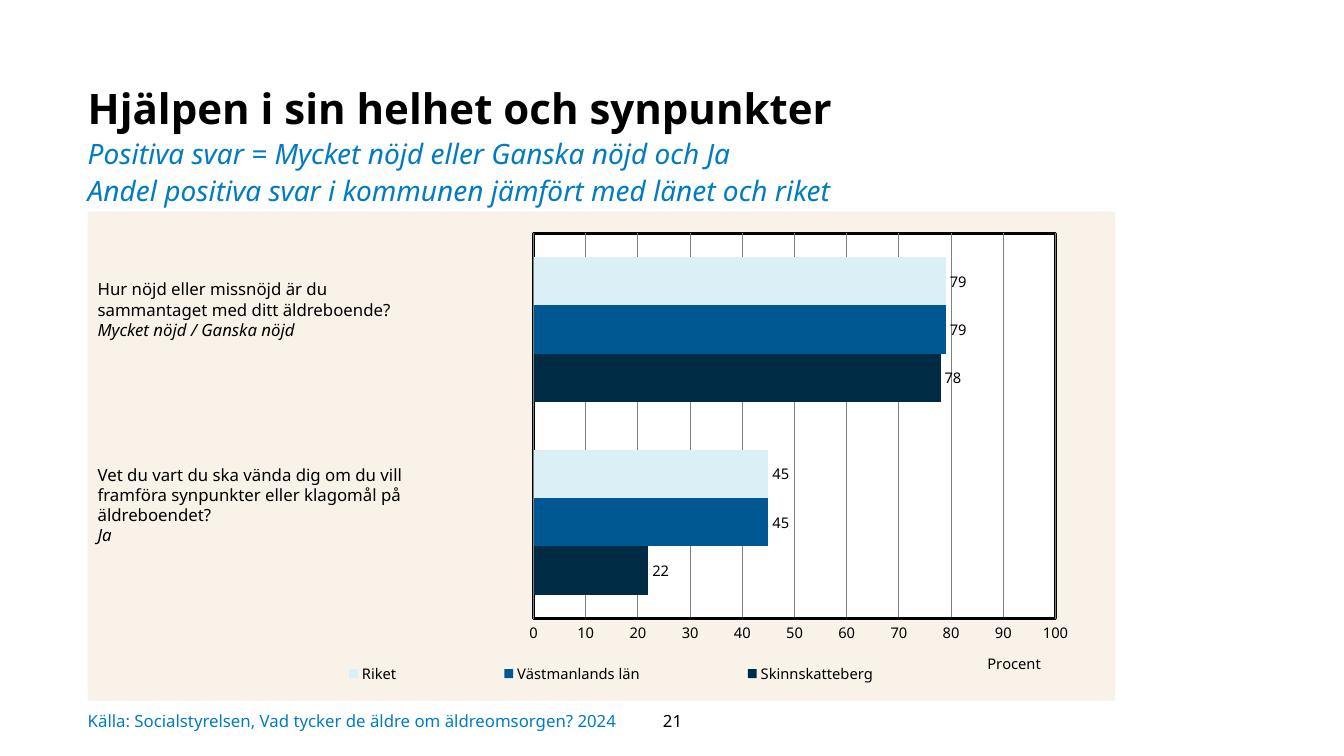
from lxml.etree import SubElement
from pptx import Presentation
from pptx.chart.data import CategoryChartData
from pptx.dml.color import RGBColor
from pptx.enum.chart import XL_CHART_TYPE as ChartType, XL_LABEL_POSITION as LabelPosition
from pptx.enum.chart import XL_LEGEND_POSITION as LegendPosition, XL_TICK_MARK as TickMark
from pptx.enum.text import MSO_ANCHOR as Anchor, MSO_AUTO_SIZE as AutoSize, PP_ALIGN as Align
from pptx.oxml import parse_xml
from pptx.oxml.ns import nsdecls, qn
from pptx.util import Inches, Pt

BLACK, WHITE, BLUE = "000000", "FFFFFF", "017CC1"
SAND, GRID = "F8F2E8", "808080"
LEFT = 0.87


def color(value):
    return RGBColor.from_string(value)


class SlideBuilder:
    """Holds the style and the current slide, and adds its elements."""

    font = "Noto Sans"

    def __init__(self, deck):
        self.page = deck.slides.add_slide(deck.slide_layouts[5])

    def style(self, font, size, shade=BLACK, bold=False, italic=False):
        font.name, font.size = self.font, Pt(size)
        font.bold, font.italic = bold, italic
        font.color.rgb = color(shade)

    def place(self, shape, area):
        shape.left, shape.top, shape.width, shape.height = map(Inches, area)

    def insets(self, frame, values):
        (frame.margin_left, frame.margin_top,
         frame.margin_right, frame.margin_bottom) = map(Inches, values)

    def title(self, area, heading, subtitles):
        box = self.page.shapes.title
        self.place(box, area)
        frame = box.text_frame
        frame.word_wrap = True
        frame.auto_size = AutoSize.TEXT_TO_FIT_SHAPE
        frame.vertical_anchor = Anchor.BOTTOM
        self.insets(frame, (0, 0, 0.1, 0.05))
        para = frame.paragraphs[0]
        para.alignment, para.line_spacing = Align.LEFT, 1.1
        span = para.add_run()
        span.text = heading
        self.style(span.font, 30, bold=True)
        for line in subtitles:
            para.add_line_break()
            span = para.add_run()
            span.text = line
            self.style(span.font, 20, BLUE, italic=True)

    def text(self, area, lines, shade=BLACK, align=Align.LEFT,
             anchor=Anchor.TOP, margins=(0.1, 0.05, 0.1, 0.05)):
        frame = self.page.shapes.add_textbox(*map(Inches, area)).text_frame
        frame.word_wrap, frame.vertical_anchor = True, anchor
        self.insets(frame, margins)
        for index, (line, italic) in enumerate(lines):
            para = frame.add_paragraph() if index else frame.paragraphs[0]
            para.alignment = align
            span = para.add_run()
            span.text = line
            self.style(span.font, 12, shade, italic=italic)

    def layout(self, element, after, **sizes):
        for old in element.findall(qn("c:layout")):
            element.remove(old)
        layout = parse_xml(f"<c:layout {nsdecls('c')}/>")
        manual = SubElement(layout, qn("c:manualLayout"))
        if "inner" in sizes:
            SubElement(manual, qn("c:layoutTarget"), val=sizes.pop("inner"))
        for key in ("x", "y"):
            SubElement(manual, qn(f"c:{key}Mode"), val="edge")
        for key, value in sizes.items():
            SubElement(manual, qn(f"c:{key}"), val=str(value))
        if after is None:
            element.insert(0, layout)
        else:
            element.find(qn(after)).addnext(layout)

    def fill_area(self, element, before, fill, line):
        outline = (f'<a:ln w="{Pt(2)}"><a:solidFill><a:srgbClr val="{line}"/></a:solidFill></a:ln>'
                   if line else "<a:ln><a:noFill/></a:ln>")
        area = parse_xml(f'<c:spPr {nsdecls("c", "a")}><a:solidFill><a:srgbClr val="{fill}"/>'
                         f"</a:solidFill>{outline}</c:spPr>")
        if before is None:
            element.append(area)
        else:
            element.find(qn(before)).addprevious(area)

    def bar_chart(self, area, categories, rows, axis_title):
        data = CategoryChartData()
        data.categories = categories
        for name, values, _ in rows:
            data.add_series(name, values)
        chart = self.page.shapes.add_chart(
            ChartType.BAR_CLUSTERED, *map(Inches, area), data).chart
        self.style(chart.font, 10.5)
        chart.has_title = False
        self.bars(chart.plots[0], rows)
        self.axes(chart, axis_title)
        chart.has_legend = True
        legend = chart.legend
        legend.position, legend.include_in_layout = LegendPosition.BOTTOM, False
        self.style(legend.font, 10.5)
        space = chart.element
        plot_area = space.chart.plotArea
        self.layout(legend._element, "c:legendPos", x=0.154, y=0.91, w=0.711, h=0.07)
        self.layout(plot_area, None, inner="inner", x=0.434, y=0.044, w=0.508, h=0.789)
        self.fill_area(plot_area, None, WHITE, BLACK)
        self.fill_area(space, "c:txPr", SAND, None)

    def bars(self, plot, rows):
        plot.gap_width, plot.overlap = 100, 0
        plot.vary_by_categories = False
        for series, (_, _, shade) in zip(plot.series, rows):
            series.format.fill.solid()
            series.format.fill.fore_color.rgb = color(shade)
            labels = series.data_labels
            labels.show_value = True
            labels.position = LabelPosition.OUTSIDE_END
            self.style(labels.font, 10.5)

    def axes(self, chart, axis_title):
        chart.category_axis.visible = False
        axis = chart.value_axis
        axis.minimum_scale, axis.maximum_scale, axis.major_unit = 0, 100, 10
        axis.major_tick_mark = axis.minor_tick_mark = TickMark.NONE
        axis.format.line.color.rgb = color(BLACK)
        axis.format.line.width = Pt(2)
        axis.has_major_gridlines = True
        axis.major_gridlines.format.line.color.rgb = color(GRID)
        axis.major_gridlines.format.line.width = Pt(0.75)
        self.style(axis.tick_labels.font, 10.5)
        span = axis.axis_title.text_frame.paragraphs[0].add_run()
        span.text = axis_title
        self.style(span.font, 10.5)
        self.layout(axis.axis_title._element, "c:tx", x=0.873, y=0.895)


def main():
    deck = Presentation()
    deck.slide_width, deck.slide_height = Inches(13.33), Inches(7.5)
    slide = SlideBuilder(deck)
    slide.title((LEFT, 0.76, 7.79, 1.34), "Hjälpen i sin helhet och synpunkter",
                ["Positiva svar = Mycket nöjd eller Ganska nöjd och Ja",
                 "Andel positiva svar i kommunen jämfört med länet och riket"])
    slide.bar_chart((LEFT, 2.1, 10.19, 4.85), ["1", "2"],
                    [("Skinnskatteberg", (22, 78), "002B45"),
                     ("Västmanlands län", (45, 79), "005892"),
                     ("Riket", (45, 79), "DBF0F6")], "Procent")
    slide.text((LEFT, 2.72, 3.36, 0.88),
               [("Hur nöjd eller missnöjd är du", False),
                ("sammantaget med ditt äldreboende?", False),
                ("Mycket nöjd / Ganska nöjd", True)])
    slide.text((LEFT, 4.56, 3.36, 0.91),
               [("Vet du vart du ska vända dig om du vill framföra synpunkter "
                 "eller klagomål på äldreboendet?", False), ("Ja", True)])
    slide.text((LEFT, 6.95, 5.91, 0.4),
               [("Källa: Socialstyrelsen, Vad tycker de äldre om äldreomsorgen? 2024", False)],
               BLUE, anchor=Anchor.MIDDLE, margins=(0, 0, 0, 0))
    slide.text((6.16, 6.95, 1.02, 0.4), [("21", False)],
               align=Align.CENTER, anchor=Anchor.MIDDLE)
    deck.save("out.pptx")


if __name__ == "__main__":
    main()
